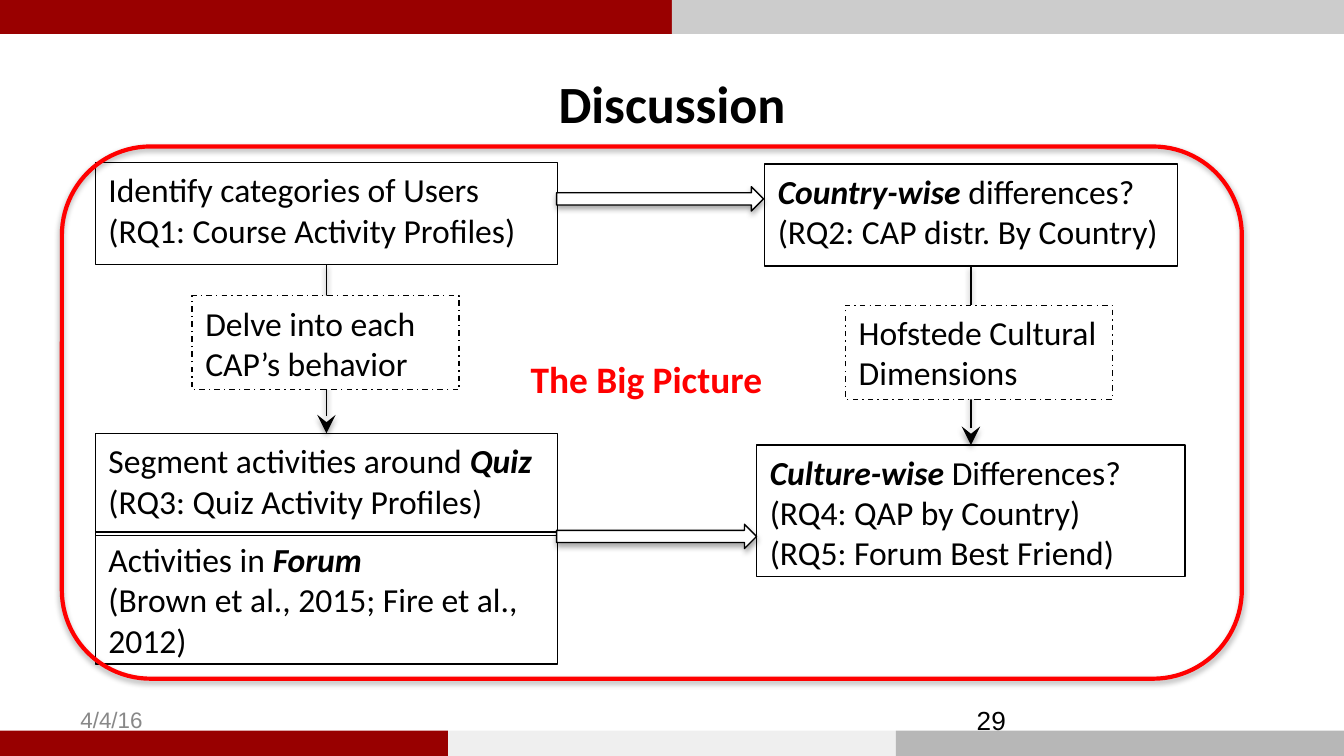
from lxml import etree
from pptx import Presentation
from pptx.dml.color import RGBColor
from pptx.enum.dml import MSO_LINE
from pptx.enum.shapes import MSO_CONNECTOR, MSO_SHAPE
from pptx.enum.text import MSO_ANCHOR, PP_ALIGN
from pptx.oxml.ns import qn
from pptx.util import Cm, Pt

RECT = MSO_SHAPE.RECTANGLE
ROUND = MSO_SHAPE.ROUNDED_RECTANGLE
ARROW = MSO_SHAPE.RIGHT_ARROW
STRAIGHT = MSO_CONNECTOR.STRAIGHT
DASH = MSO_LINE.DASH_DOT
TOP, MIDDLE = MSO_ANCHOR.TOP, MSO_ANCHOR.MIDDLE
LEFT, CENTER = PP_ALIGN.LEFT, PP_ALIGN.CENTER

BLACK = RGBColor(0x00, 0x00, 0x00)
WHITE = RGBColor(0xFF, 0xFF, 0xFF)
RED = RGBColor(0xFF, 0x00, 0x00)
MAROON = RGBColor(0x99, 0x00, 0x00)
CRIMSON = RGBColor(0x98, 0x00, 0x00)
SILVER = RGBColor(0xCC, 0xCC, 0xCC)
PALE = RGBColor(0xEF, 0xEF, 0xEF)
ASH = RGBColor(0xB7, 0xB7, 0xB7)
GRAY = RGBColor(0x88, 0x88, 0x88)

WIDTH, HEIGHT = 25.4, 14.29


class Board:
    base = {"name": "Calibri", "size": Pt(18), "bold": False, "italic": False}
    frame = {
        "margin_left": Cm(0.25),
        "margin_right": Cm(0.25),
        "margin_top": Cm(0.13),
        "margin_bottom": Cm(0.13),
        "word_wrap": True,
    }

    def __init__(self, slide):
        self.slide = slide

    def apply(self, item, values):
        for key, value in values.items():
            setattr(item, key, value)

    def letter(self, shape, text, color=BLACK, anchor=TOP, align=LEFT, **look):
        body = shape.text_frame
        self.apply(body, {**self.frame, "vertical_anchor": anchor})
        for spot, line in enumerate(text.split("\n")):
            para = body.add_paragraph() if spot else body.paragraphs[0]
            para.alignment = align
            for turn, part in enumerate(line.split("*")):
                if part:
                    run = para.add_run()
                    run.text = part
                    self.apply(run.font, {**self.base, **look})
                    if turn % 2:
                        self.apply(run.font, {"bold": True, "italic": True})
                    run.font.color.rgb = color

    def shade(self, effects, alpha, dist):
        shadow = etree.SubElement(
            effects, qn("a:outerShdw"), blurRad=str(Pt(3.1)),
            dist=str(Pt(dist)), dir="5400000", rotWithShape="0")
        color = etree.SubElement(shadow, qn("a:srgbClr"), val=str(BLACK))
        etree.SubElement(color, qn("a:alpha"), val=str(alpha * 1000))

    def shape(self, kind, place, fill=None, line=None, width=0.75, dash=None,
              shadow=False):
        shape = self.slide.shapes.add_shape(kind, *map(Cm, place))
        shape.shadow.inherit = False
        if fill is None:
            shape.fill.background()
        else:
            shape.fill.solid()
            shape.fill.fore_color.rgb = fill
        if line is None:
            shape.line.fill.background()
        else:
            shape.line.color.rgb = line
            shape.line.width = Pt(width)
        if dash:
            shape.line.dash_style = dash
        if shadow:
            self.shade(shape._element.spPr.find(qn("a:effectLst")), 35, 1.8)
        return shape

    def box(self, place, text, **look):
        box = self.shape(RECT, place, line=BLACK, **look)
        self.letter(box, text)
        return box

    def label(self, place, text, **look):
        label = self.slide.shapes.add_textbox(*map(Cm, place))
        self.letter(label, text, **look)

    def title(self, place, text):
        title = self.slide.shapes.title
        keys = ("left", "top", "width", "height")
        self.apply(title, dict(zip(keys, map(Cm, place))))
        self.letter(title, text, anchor=MIDDLE, align=CENTER,
                    size=Pt(28), bold=True)

    def bars(self, top, height, colors):
        wide = WIDTH / len(colors)
        for spot, color in enumerate(colors):
            self.shape(RECT, (spot * wide, top, wide, height), fill=color)

    def link(self, upper, lower):
        link = self.slide.shapes.add_connector(STRAIGHT, 0, 0, 0, 0)
        link.begin_connect(upper, 2)
        link.end_connect(lower, 0)
        link.line.color.rgb = BLACK
        link.line.width = Pt(1)
        props = link._element.spPr
        etree.SubElement(props.find(qn("a:ln")), qn("a:tailEnd"),
                         type="stealth", w="lg", len="lg")
        self.shade(etree.SubElement(props, qn("a:effectLst")), 38, 1.6)


def main():
    deck = Presentation()
    deck.slide_width, deck.slide_height = Cm(WIDTH), Cm(HEIGHT)
    board = Board(deck.slides.add_slide(deck.slide_layouts[5]))

    board.bars(0, 0.64, (MAROON, SILVER))
    board.bars(13.81, 0.48, (CRIMSON, PALE, ASH))
    board.title((1.27, 0.81, 22.86, 2.24), "Discussion")

    users = board.box(
        (1.8, 3.07, 8.74, 1.93),
        "Identify categories of Users\n(RQ1: Course Activity Profiles)")
    country = board.box(
        (14.45, 3.1, 7.8, 1.93),
        "*Country-wise *differences? (RQ2: CAP distr. By Country)")
    quiz = board.box(
        (1.8, 8.19, 8.74, 1.93),
        "Segment activities around *Quiz*\n(RQ3: Quiz Activity Profiles)")
    culture = board.box(
        (14.3, 8.41, 8.1, 2.49),
        "*Culture-wise *Differences?\n(RQ4: QAP by Country)\n"
        "(RQ5: Forum Best Friend)")
    board.box(
        (1.8, 10.06, 8.74, 2.49),
        "Activities in *Forum*\n(Brown et al., 2015; Fire et al., 2012)")

    for top, wide in ((3.53, 3.91), (9.91, 3.78)):
        board.shape(ARROW, (10.52, top, wide, 0.46), fill=WHITE, line=BLACK,
                    shadow=True)

    steps = (
        (users, quiz, 3.63, 5.59, "Delve into each CAP’s behavior"),
        (country, culture, 15.98, 5.77, "Hofstede Cultural Dimensions"),
    )
    for upper, lower, left, top, text in steps:
        board.link(upper, lower)
        board.box((left, top, 5.05, 1.78), text, fill=WHITE, dash=DASH)

    board.shape(ROUND, (1.17, 2.77, 22.3, 10.06), line=RED, width=2.25,
                shadow=True)
    board.label((9.78, 6.6, 5.08, 0.84), "The Big Picture", color=RED,
                size=Pt(20), bold=True)
    board.label((1.27, 13.23, 5.92, 0.76), "4/4/16", color=GRAY,
                anchor=MIDDLE, name="Arial", size=Pt(12))
    board.label((18.21, 13.23, 5.92, 0.76), "29", anchor=MIDDLE,
                name="Arial", size=Pt(14))

    deck.save("out.pptx")


if __name__ == "__main__":
    main()
